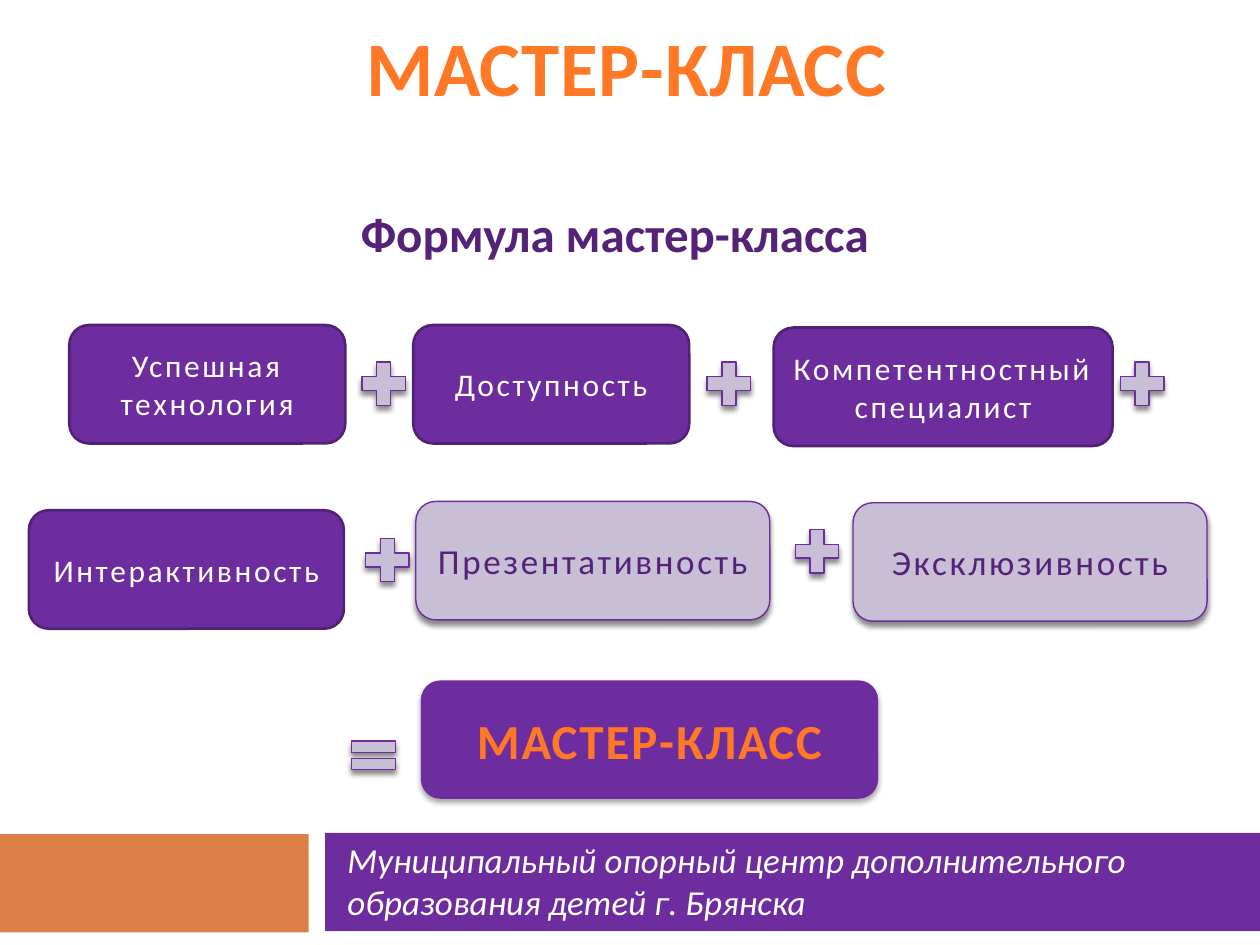
from lxml import etree
from pptx import Presentation
from pptx import util as u
from pptx.dml.color import RGBColor
from pptx.enum import shapes, text
from pptx.oxml.ns import qn

COLORS = {
    "orange": "FF7825",
    "terracotta": "DD8047",
    "purple": "6E2D9E",
    "dark_purple": "542378",
    "edge": "512175",
    "lilac": "C8BED6",
    "white": "FFFFFF",
    "black": "000000",
}
FONT = "Calibri"
BOX_HEIGHT = 0.94
SIGN_SIZE = 0.47
SHAPE = shapes.MSO_SHAPE


def rgb(name):
    return RGBColor.from_string(COLORS[name])


def add_shadow(shape, opacity, distance):
    effects = shape._element.spPr.find(qn("a:effectLst"))
    shadow = etree.SubElement(
        effects, qn("a:outerShdw"), blurRad=str(u.Pt(3)),
        dist=str(u.Pt(distance)), dir="5400000", algn="ctr", rotWithShape="0")
    color = etree.SubElement(shadow, qn("a:srgbClr"), val=COLORS["black"])
    etree.SubElement(color, qn("a:alpha"), val=str(opacity * 1000))


def add_block(slide, kind, box, fill, line=None, line_width=0.79, shadow=None):
    block = slide.shapes.add_shape(kind, *map(u.Inches, box))
    block.shadow.inherit = False
    block.fill.solid()
    block.fill.fore_color.rgb = rgb(fill)
    if line:
        block.line.color.rgb = rgb(line)
        block.line.width = u.Pt(line_width)
    else:
        block.line.fill.background()
    if shadow:
        add_shadow(block, *shadow)
    return block


def write(shape, words, size, color, bold=False, italic=False, spacing=0,
          align=text.PP_ALIGN.CENTER, anchor=text.MSO_ANCHOR.MIDDLE):
    frame = shape.text_frame
    frame.word_wrap = True
    frame.vertical_anchor = anchor
    paragraph = frame.paragraphs[0]
    paragraph.alignment = align
    run = paragraph.add_run()
    run.text = words
    font = paragraph.font
    font.name, font.size, font.bold, font.italic = FONT, u.Pt(size), bold, italic
    font.color.rgb = rgb(color)
    if spacing:
        run.font._element.set("spc", str(round(spacing * 100)))
    return paragraph


def add_caption(slide, box, words, size, color, **style):
    caption = slide.shapes.add_textbox(*map(u.Inches, box))
    return write(caption, words, size, color, **style)


def add_sign(slide, left, top, kind=SHAPE.MATH_PLUS, height=SIGN_SIZE):
    add_block(slide, kind, (left, top, SIGN_SIZE, height), "lilac", "purple",
              shadow=(45, 2.4))


def add_dark_term(slide, left, top, width, words):
    term = add_block(slide, SHAPE.ROUNDED_RECTANGLE,
                     (left, top, width, BOX_HEIGHT), "purple", "edge", 1.5)
    write(term, words, 18, "white", spacing=1.5)


def add_light_term(slide, left, top, width, words):
    term = add_block(slide, SHAPE.ROUNDED_RECTANGLE,
                     (left, top, width, BOX_HEIGHT), "lilac", "purple",
                     shadow=(45, 2.4))
    write(term, words, 20, "dark_purple", spacing=1.5)


def add_heading(slide, left, top):
    add_caption(slide, (left, top, 4.38, 0.94), "МАСТЕР-КЛАСС", 44, "orange",
                bold=True, spacing=0.5, align=text.PP_ALIGN.LEFT,
                anchor=text.MSO_ANCHOR.BOTTOM)


def add_formula(slide, left, top):
    """Terms, their plus signs and the result, offset from the first dark box."""
    add_caption(slide, (left + 0.55, top - 2.49, 8.2, 0.57),
                "Формула мастер-класса", 28, "dark_purple", bold=True)
    terms = [
        (add_dark_term, 0.32, -1.47, 2.19, "Успешная технология"),
        (add_dark_term, 3.05, -1.47, 2.19, "Доступность"),
        (add_dark_term, 5.91, -1.45, 2.69, "Компетентностный специалист"),
        (add_dark_term, 0, 0, 2.5, "Интерактивность"),
        (add_light_term, 3.07, -0.07, 2.81, "Презентативность"),
        (add_light_term, 6.54, -0.06, 2.81, "Эксклюзивность"),
    ]
    for add_term, dx, dy, width, words in terms:
        add_term(slide, left + dx, top + dy, width, words)
    for dx, dy in [(2.58, -1.24), (5.32, -1.24), (8.6, -1.24),
                   (2.61, 0.16), (6.02, 0.09)]:
        add_sign(slide, left + dx, top + dy)


def add_result(slide, left, top):
    add_sign(slide, left, top + 0.4, SHAPE.MATH_EQUAL, 0.39)
    result = add_block(slide, SHAPE.ROUNDED_RECTANGLE,
                       (left + 0.61, top, 3.63, BOX_HEIGHT), "purple",
                       shadow=(35, 2))
    write(result, "МАСТЕР-КЛАСС", 28, "orange", bold=True, spacing=1.1)


def add_footer(slide, left, top):
    add_block(slide, SHAPE.RECTANGLE, (left, top + 0.01, 2.46, 0.78), "terracotta")
    add_block(slide, SHAPE.RECTANGLE, (left + 2.59, top, 7.42, 0.78), "purple")
    organizer = add_caption(
        slide, (left + 2.67, top + 0.03, 7.34, 0.7),
        "Муниципальный опорный центр дополнительного образования детей г. Брянска",
        20, "white", italic=True, align=text.PP_ALIGN.LEFT)
    organizer.space_before = u.Pt(7)


def main():
    deck = Presentation()
    deck.slide_width, deck.slide_height = u.Inches(10), u.Inches(7.5)
    slide = deck.slides.add_slide(deck.slide_layouts[6])
    add_footer(slide, -0.01, 6.61)
    add_heading(slide, 2.81, 0)
    add_formula(slide, 0.23, 4.05)
    add_result(slide, 2.73, 5.4)
    deck.save("out.pptx")


if __name__ == "__main__":
    main()
